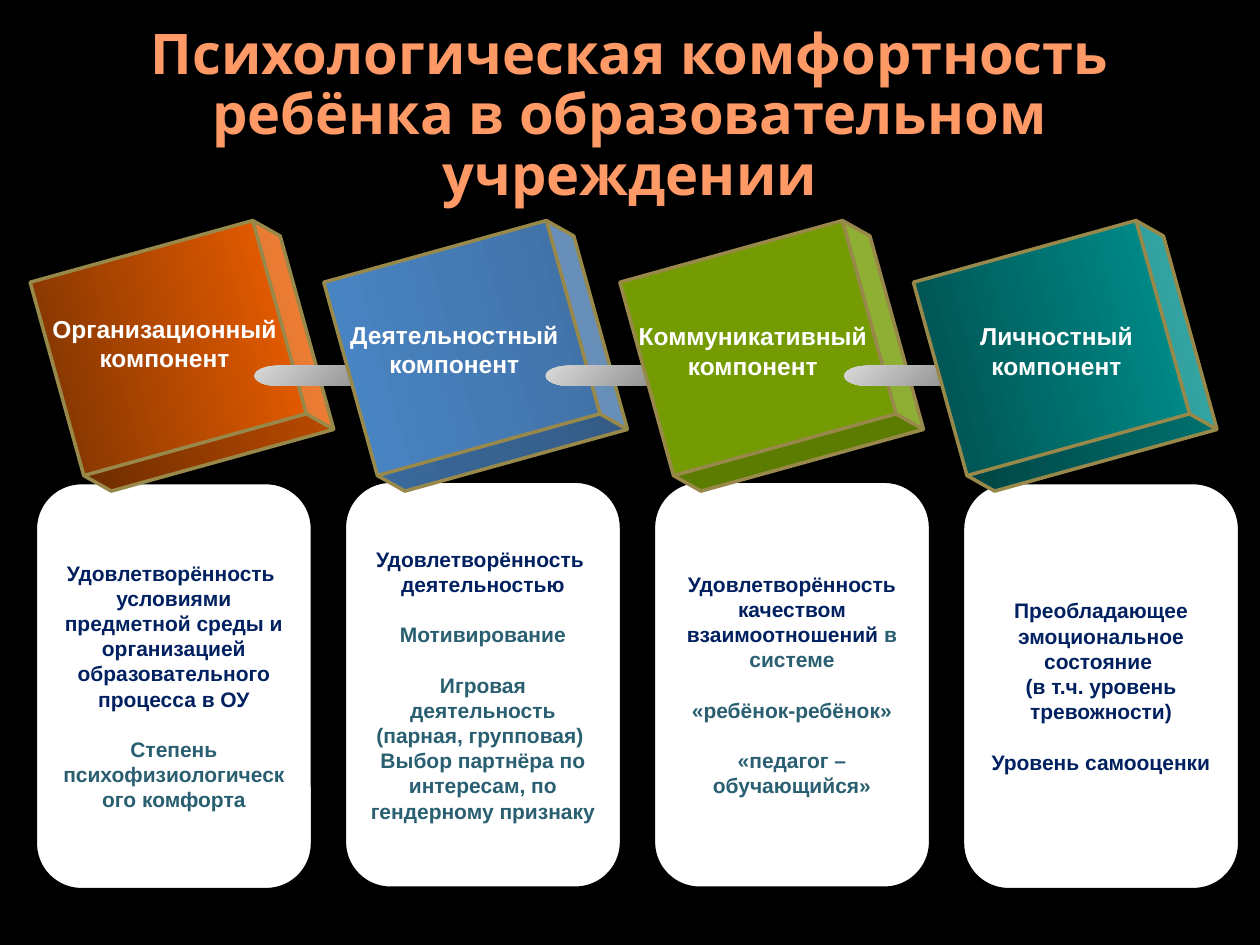
"""Build the slide on the components of a child's psychological comfort."""
from pptx import Presentation
from pptx.dml.color import RGBColor
from pptx.enum.shapes import MSO_SHAPE
from pptx.enum.text import MSO_ANCHOR, PP_ALIGN
from pptx.util import Pt

NAVY, TEAL, WHITE = "002060", "295F71", "FFFFFF"
GAP = 14.4


def color(hex_code):
    return RGBColor.from_string(hex_code)


def write(shape, paragraphs, size=12, font="Arial", anchor=MSO_ANCHOR.MIDDLE, spacing=None):
    frame = shape.text_frame
    frame.word_wrap = True
    frame.vertical_anchor = anchor
    for index, (gap, runs) in enumerate(paragraphs):
        paragraph = frame.add_paragraph() if index else frame.paragraphs[0]
        paragraph.alignment = PP_ALIGN.CENTER
        paragraph.line_spacing = spacing
        if gap:
            paragraph.space_before = Pt(gap)
        for text, hex_code in runs:
            run = paragraph.add_run()
            run.text = text
            run.font.name = font
            run.font.size = Pt(size)
            run.font.bold = True
            run.font.color.rgb = color(hex_code)


prs = Presentation()
prs.slide_width, prs.slide_height = Pt(720), Pt(540)
slide = prs.slides.add_slide(prs.slide_layouts[6])
slide.background.fill.solid()
slide.background.fill.fore_color.rgb = color("000000")

title = slide.shapes.add_textbox(Pt(36), Pt(21.6), Pt(648), Pt(90))
heading = "Психологическая комфортность ребёнка в образовательном учреждении"
write(title, [(0, [(heading, "FF9966")])], size=32, font="Open Sans", spacing=0.9)

descriptions = [
    (275.8, [
        (0, [("Удовлетворённость ", NAVY)]),
        (0, [("условиями предметной среды и организацией образовательного процесса в ОУ", NAVY)]),
        (GAP, [("Степень психофизиологического комфорта", TEAL)]),
    ]),
    (275, [
        (0, [("Удовлетворённость ", NAVY)]),
        (0, [("деятельностью", NAVY)]),
        (GAP, [("Мотивирование", TEAL)]),
        (GAP, [("Игровая деятельность (парная, групповая) ", TEAL)]),
        (0, [("Выбор партнёра по интересам, по гендерному признаку", TEAL)]),
    ]),
    (275, [
        (0, [("Удовлетворённость качеством взаимоотношений ", NAVY), ("в системе", TEAL)]),
        (GAP, [("«ребёнок-ребёнок»", TEAL)]),
        (GAP, [("«педагог – обучающийся»", TEAL)]),
    ]),
    (275.8, [
        (0, [("Преобладающее эмоциональное состояние ", NAVY)]),
        (0, [("(в т.ч. уровень тревожности)", NAVY)]),
        (GAP, [("Уровень самооценки", NAVY)]),
    ]),
]
for column, (top, paragraphs) in enumerate(descriptions):
    card = slide.shapes.add_shape(
        MSO_SHAPE.ROUNDED_RECTANGLE, Pt(20.2 + 176.6 * column), Pt(top), Pt(158.4), Pt(232.6))
    card.shadow.inherit = False
    card.fill.solid()
    card.fill.fore_color.rgb = color(WHITE)
    card.line.color.rgb = color("000000")
    card.line.width = Pt(2)
    write(card, paragraphs)

components = [
    ("Организационный компонент", 40.3, 20.2, 175.7, 145.4, "FE6400", "763101"),
    ("Деятельностный компонент", 208.1, 185.8, 179.3, 311.8, "406EA0", "4A87C8"),
    ("Коммуникативный компонент", 377.3, 356.4, 180, 482.4, "749B02", "749A04"),
    ("Личностный компонент", 545, 529.9, 180, None, "009997", "004B49"),
]
for name, cube_left, label_left, label_top, link_left, start, end in components:
    cube = slide.shapes.add_shape(MSO_SHAPE.CUBE, Pt(cube_left), Pt(131), Pt(127.4), Pt(144.7))
    cube.rotation = 74.5
    cube.adjustments[0] = 0.1
    cube.line.color.rgb = color("98894B")
    cube.line.width = Pt(2)
    blocks = [(cube, 270, start, end)]

    label = slide.shapes.add_textbox(Pt(label_left), Pt(label_top), Pt(147.6), Pt(41))
    write(label, [(0, [(name, WHITE)])], size=14, anchor=MSO_ANCHOR.TOP)

    if link_left is not None:
        link = slide.shapes.add_shape(
            MSO_SHAPE.FLOWCHART_DIRECT_ACCESS_STORAGE,
            Pt(link_left), Pt(209), Pt(79.2), Pt(11.5))
        link.line.fill.background()
        blocks.append((link, 315, "D9D9D9", "808080"))

    for block, angle, first, last in blocks:
        block.shadow.inherit = False
        block.fill.gradient()
        block.fill.gradient_angle = angle
        for stop, position, hex_code in zip(block.fill.gradient_stops, (0, 1), (first, last)):
            stop.position = position
            stop.color.rgb = color(hex_code)

prs.save("out.pptx")
